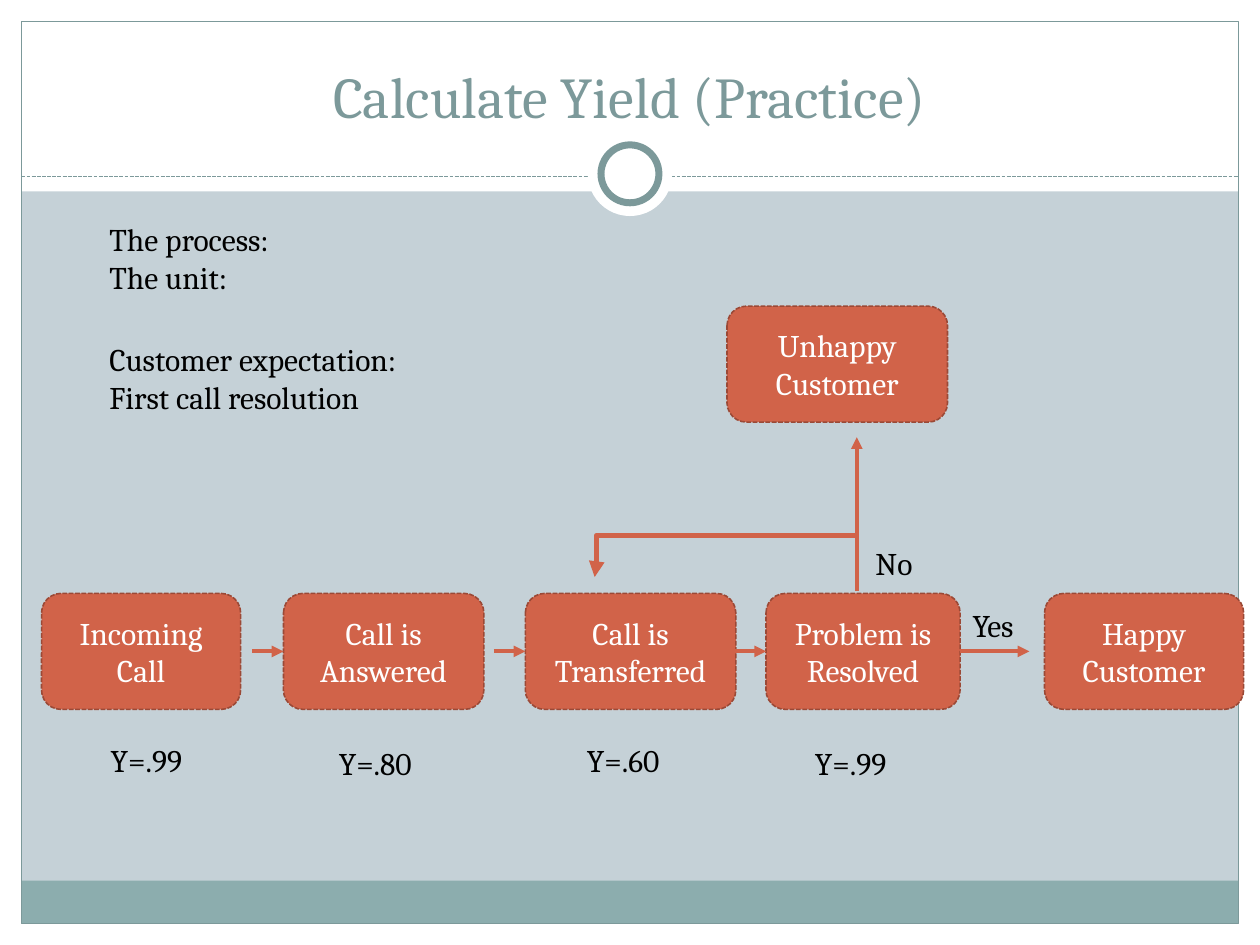
"""Builds the yield practice slide: a call-handling flow with step yields."""
import pptx
import pptx.util
import pptx.dml.color
import pptx.enum.dml
import pptx.enum.shapes
import pptx.enum.text
import pptx.oxml
import pptx.oxml.ns

WIDTH, HEIGHT, MARGIN = 10, 7.5, 0.17
FONT = "Cambria"
COLORS = {
    "background": "C5D1D7", "white": "FFFFFF", "band": "8CADAE",
    "frame": "7C999A", "box": "D16349", "box_edge": "9B4936", "black": "000000",
}
INNER = WIDTH - 2 * MARGIN
HEADER_HEIGHT, RULE_Y = 1.52, 1.4
BOX_HEIGHT, STEP_TOP = 0.92, 4.71
STEP_MIDDLE = STEP_TOP + BOX_HEIGHT / 2
BRANCH_X, BRANCH_Y = 6.8, 4.25
TITLE = "Calculate Yield (Practice)"
PANELS = [
    (0, HEIGHT - MARGIN, WIDTH, MARGIN, "white"),
    (0, 0, WIDTH, HEADER_HEIGHT, "white"),
    (0, 0, MARGIN, HEIGHT, "white"),
    (WIDTH - MARGIN, 0, MARGIN, HEIGHT, "white"),
    (MARGIN, 6.99, INNER, 0.34, "band"),
]
RINGS = [(0.67, None, 0), (0.46, "frame", 4)]
BOXES = [
    ("Incoming Call", 0.33, STEP_TOP, 1.58),
    ("Call is Answered", 2.25, STEP_TOP, 1.59),
    ("Call is Transferred", 4.17, STEP_TOP, 1.67),
    ("Problem is Resolved", 6.08, STEP_TOP, 1.54),
    ("Happy Customer", 8.29, STEP_TOP, 1.58),
    ("Unhappy Customer", 5.77, 2.43, 1.75),
]
STEP_ARROWS = [(2, 2.25), (3.92, 4.17), (5.83, 6.08), (7.62, 8.17)]
LABELS = [
    (["Y=.99"], 0.78, 5.83, 0.87),
    (["Y=.80"], 2.59, 5.86, 0.89),
    (["Y=.60"], 4.56, 5.83, 0.89),
    (["Y=.99"], 6.37, 5.86, 0.87),
    (["Yes"], 7.62, 4.76, 0.59),
    (["No"], 6.85, 4.27, 0.53),
    (["The process:", "The unit:"], 0.77, 1.7, 1.67),
    (["Customer expectation:", "First call resolution"], 0.77, 2.65, 2.79),
]
SHAPE = pptx.enum.shapes.MSO_SHAPE
CONNECTOR = pptx.enum.shapes.MSO_CONNECTOR
ANCHOR = pptx.enum.text.MSO_ANCHOR
CENTER = pptx.enum.text.PP_ALIGN.CENTER


def inches(*lengths):
    return [pptx.util.Inches(length) for length in lengths]


def rgb(name):
    return pptx.dml.color.RGBColor.from_string(COLORS[name])


def style_line(line, color, width, dashed=False):
    line.color.rgb = rgb(color)
    line.width = pptx.util.Pt(width)
    if dashed:
        line.dash_style = pptx.enum.dml.MSO_LINE.SQUARE_DOT


def add_panel(slide, kind, place, fill=None, edge=None, width=0, dashed=False):
    shape = slide.shapes.add_shape(kind, *inches(*place))
    shape.shadow.inherit = False
    if fill:
        shape.fill.solid()
        shape.fill.fore_color.rgb = rgb(fill)
    else:
        shape.fill.background()
    if edge:
        style_line(shape.line, edge, width, dashed)
    else:
        shape.line.fill.background()
    return shape


def write(shape, lines, size, color, align=None, anchor=ANCHOR.TOP, wrap=True):
    frame = shape.text_frame
    frame.word_wrap = wrap
    frame.vertical_anchor = anchor
    frame.text = "\n".join(lines)
    for paragraph in frame.paragraphs:
        paragraph.alignment = align
        paragraph.font.name = FONT
        paragraph.font.size = pptx.util.Pt(size)
        paragraph.font.color.rgb = rgb(color)


def add_line(slide, kind, start, end, color, width, dashed=False, arrow=True):
    connector = slide.shapes.add_connector(kind, *inches(*start, *end))
    style_line(connector.line, color, width, dashed)
    if arrow:
        tail = pptx.oxml.parse_xml(
            f'<a:tailEnd {pptx.oxml.ns.nsdecls("a")} type="triangle"/>')
        connector.line._get_or_add_ln().append(tail)
    effects = pptx.oxml.parse_xml(f'<a:effectLst {pptx.oxml.ns.nsdecls("a")}/>')
    connector._element.spPr.append(effects)
    return connector


def add_backdrop(slide):
    slide.background.fill.solid()
    slide.background.fill.fore_color.rgb = rgb("background")
    for *place, fill in PANELS:
        add_panel(slide, SHAPE.RECTANGLE, place, fill)
    frame = (MARGIN, MARGIN, INNER, HEIGHT - 2 * MARGIN)
    add_panel(slide, SHAPE.RECTANGLE, frame, None, "frame", 0.75)
    add_line(slide, CONNECTOR.STRAIGHT, (MARGIN, RULE_Y), (WIDTH - MARGIN, RULE_Y),
             "frame", 0.75, dashed=True, arrow=False)
    for size, edge, width in RINGS:
        place = ((WIDTH - size) / 2, 1.38 - size / 2, size, size)
        add_panel(slide, SHAPE.OVAL, place, "white", edge, width)
    title = slide.shapes.add_textbox(*inches(0.33, 0.25, 9.33, 0.83))
    write(title, [TITLE], 33, "frame", CENTER, ANCHOR.BOTTOM)


def add_flow(slide):
    for text, left, top, width in BOXES:
        box = add_panel(slide, SHAPE.ROUNDED_RECTANGLE, (left, top, width, BOX_HEIGHT),
                        "box", "box_edge", 0.9, dashed=True)
        write(box, [text], 18, "white", CENTER, ANCHOR.MIDDLE)
    for start, end in STEP_ARROWS:
        add_line(slide, CONNECTOR.STRAIGHT, (start, STEP_MIDDLE), (end, STEP_MIDDLE),
                 "box", 2.25)
    add_line(slide, CONNECTOR.STRAIGHT, (BRANCH_X, 4.69), (BRANCH_X, 3.47), "box", 2.25)
    rework = add_line(slide, CONNECTOR.ELBOW, (BRANCH_X, BRANCH_Y), (4.72, 4.58), "box", 3)
    rework._element.spPr.prstGeom.get_or_add_avLst()._add_gd()
    guide = rework._element.spPr.prstGeom.avLst[0]
    guide.set("name", "adj1")
    guide.set("fmla", "val 99300")
    for lines, left, top, width in LABELS:
        height = 0.4 + 0.31 * (len(lines) - 1)
        label = slide.shapes.add_textbox(*inches(left, top, width, height))
        write(label, lines, 18, "black", wrap=False)


def main():
    presentation = pptx.Presentation()
    presentation.slide_width, presentation.slide_height = inches(WIDTH, HEIGHT)
    slide = presentation.slides.add_slide(presentation.slide_layouts[6])
    add_backdrop(slide)
    add_flow(slide)
    presentation.save("out.pptx")


if __name__ == "__main__":
    main()
